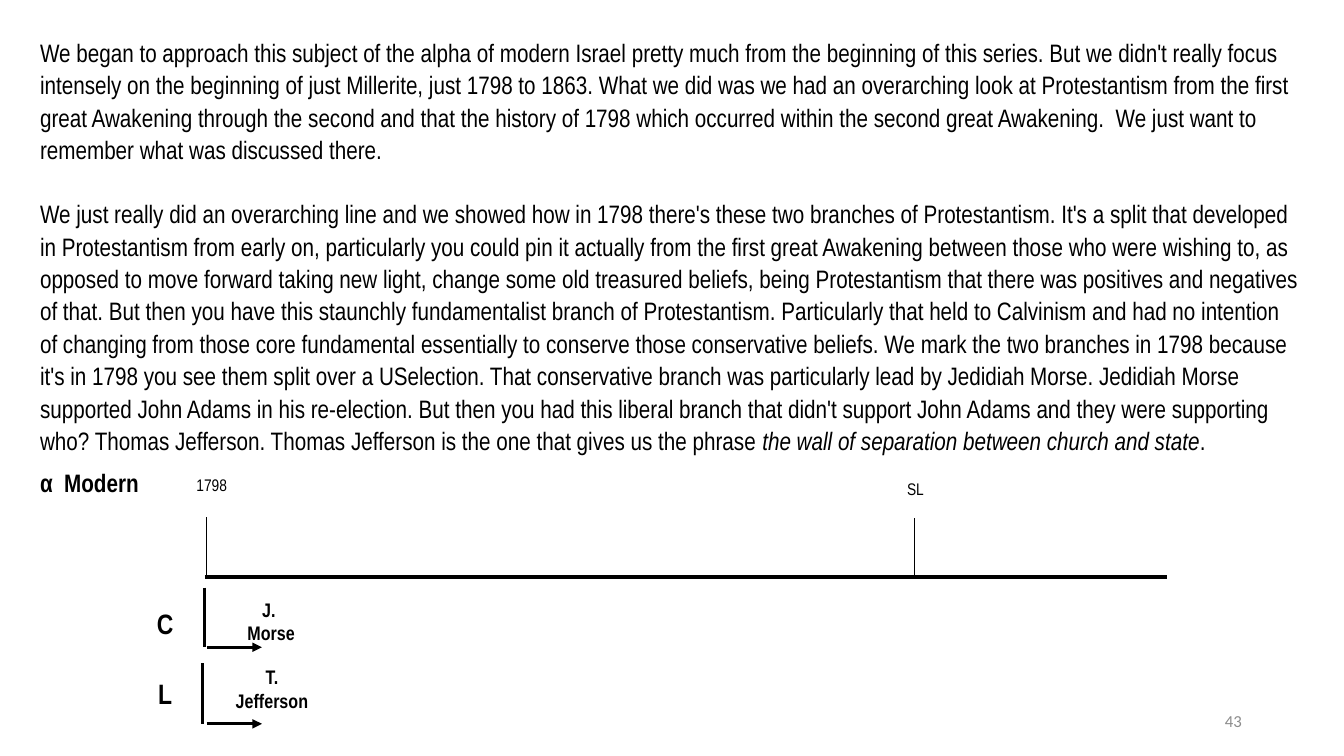
"""Build the slide on the two branches of Protestantism in 1798."""
from dataclasses import dataclass

from lxml.etree import SubElement
from pptx import Presentation
from pptx.dml.color import RGBColor
from pptx.enum.shapes import MSO_CONNECTOR
from pptx.enum.text import MSO_ANCHOR, MSO_AUTO_SIZE, PP_ALIGN
from pptx.oxml.ns import qn
from pptx.slide import Slide
from pptx.text.text import TextFrame
from pptx.util import Cm, Pt

BLACK = "000000"
GREY = "8C8C8C"
TIMELINE_Y = 14.53
ARROW_START, ARROW_END = 5.21, 6.6

OPENING = (
    "We began to approach this subject of the alpha of modern Israel pretty much from the beginning of "
    "this series. But we didn't really focus intensely on the beginning of just Millerite, just 1798 to "
    "1863. What we did was we had an overarching look at Protestantism from the first great Awakening "
    "through the second and that the history of 1798 which occurred within the second great Awakening.  "
    "We just want to remember what was discussed there."
)
SPLIT = (
    "We just really did an overarching line and we showed how in 1798 there's these two branches of "
    "Protestantism. It's a split that developed in Protestantism from early on, particularly you could "
    "pin it actually from the first great Awakening between those who were wishing to, as opposed to move "
    "forward taking new light, change some old treasured beliefs, being Protestantism that there was "
    "positives and negatives of that."
)
CONSERVATIVES = (
    "But then you have this staunchly fundamentalist branch of Protestantism. Particularly that held to "
    "Calvinism and had no intention of changing from those core fundamental essentially to conserve those "
    "conservative beliefs. We mark the two branches in 1798 because it's in 1798 you see them split over "
    "a USelection. That conservative branch was particularly lead by Jedidiah Morse. Jedidiah Morse "
    "supported John Adams in his re-election."
)
LIBERALS = (
    "But then you had this liberal branch that didn't support John Adams and they were supporting who? "
    "Thomas Jefferson. Thomas Jefferson is the one that gives us the phrase "
)
QUOTE = "the wall of separation between church and state"


@dataclass
class Label:
    """A text box with one format, placed in centimetres."""
    text: str
    left: float
    top: float
    width: float
    height: float
    size: float
    bold: bool = False
    align: PP_ALIGN = PP_ALIGN.LEFT
    font: str = "Arial Narrow"
    color: str = BLACK


@dataclass
class Stroke:
    """A straight line in centimetres, with its weight in points."""
    x1: float
    y1: float
    x2: float
    y2: float
    weight: float
    arrow: bool = False


@dataclass
class Branch:
    """A branch of Protestantism with its letter, leader and bracket."""
    letter: str
    leader: str
    letter_top: float
    leader_left: float
    leader_top: float
    bar_x: float
    bar_top: float
    arrow_y: float


LABELS = [
    Label("43", 23.93, 17.65, 7.62, 1.02, 12, align=PP_ALIGN.RIGHT, font="Calibri", color=GREY),
    Label("1798", 4.7, 11.84, 1.91, 0.76, 12),
    Label("SL", 22.61, 11.94, 1.42, 0.76, 12),
    Label("α  Modern", 0.76, 11.66, 3.63, 1.02, 18, bold=True),
]
STROKES = [
    Stroke(5.16, TIMELINE_Y, 29.41, TIMELINE_Y, 3),
    Stroke(5.21, 13.03, 5.21, TIMELINE_Y, 0.75),
    Stroke(23.04, 13.06, 23.04, TIMELINE_Y, 0.75),
]
BRANCHES = [
    Branch("C", "J. \nMorse", 15.16, 5.64, 14.94, 5.16, 14.81, 16.31),
    Branch("L", "T.\nJefferson", 16.92, 5.66, 16.64, 5.11, 16.71, 18.24),
]


def rgb(value: str) -> RGBColor:
    """Turn a hex string into a colour."""
    return RGBColor.from_string(value)


def add_label(page: Slide, label: Label) -> TextFrame:
    """Add a formatted text box and return its text frame."""
    box = page.shapes.add_textbox(Cm(label.left), Cm(label.top), Cm(label.width), Cm(label.height))
    frame = box.text_frame
    frame.word_wrap = True
    frame.auto_size = MSO_AUTO_SIZE.SHAPE_TO_FIT_TEXT
    frame.text = label.text
    for para in frame.paragraphs:
        para.alignment = label.align
        for span in para.runs:
            span.font.name = label.font
            span.font.size = Pt(label.size)
            span.font.bold = label.bold
            span.font.color.rgb = rgb(label.color)
    return frame


def add_body(page: Slide) -> None:
    """Add the two paragraphs of prose, with the quoted phrase in italics."""
    prose = f"{OPENING}\n{SPLIT} {CONSERVATIVES} {LIBERALS}"
    frame = add_label(page, Label(prose, 0.76, 0.76, 32.31, 10.9, 18))
    opening, branches = frame.paragraphs
    opening.space_after = Pt(23)
    for para in frame.paragraphs:
        para.line_spacing = 1.07
    for text, italic in ((QUOTE, True), (".", False)):
        span = branches.add_run()
        span.text = text
        span.font.name = "Arial Narrow"
        span.font.size = Pt(18)
        span.font.italic = italic
        span.font.color.rgb = rgb(BLACK)


def add_stroke(page: Slide, stroke: Stroke) -> None:
    """Add a black line, with an arrowhead at its end if asked."""
    line = page.shapes.add_connector(
        MSO_CONNECTOR.STRAIGHT, Cm(stroke.x1), Cm(stroke.y1), Cm(stroke.x2), Cm(stroke.y2)
    )
    line.line.color.rgb = rgb(BLACK)
    line.line.width = Pt(stroke.weight)
    properties = line._element.spPr
    if stroke.arrow:
        SubElement(properties.find(qn("a:ln")), qn("a:tailEnd"), type="triangle")
    SubElement(properties, qn("a:effectLst"))


def add_branch(page: Slide, branch: Branch) -> None:
    """Add a branch's bar and arrow with its letter and leader."""
    add_stroke(page, Stroke(branch.bar_x, branch.bar_top, branch.bar_x, branch.arrow_y, 2.25))
    add_stroke(page, Stroke(ARROW_START, branch.arrow_y, ARROW_END, branch.arrow_y, 2.25, arrow=True))
    add_label(page, Label(branch.letter, 3.25, branch.letter_top, 1.83, 1.12, 20, True, PP_ALIGN.CENTER))
    add_label(
        page,
        Label(branch.leader, branch.leader_left, branch.leader_top, 2.39, 1.45, 14, True, PP_ALIGN.CENTER),
    )


def main() -> None:
    """Build and save the deck."""
    deck = Presentation()
    deck.slide_width, deck.slide_height = Cm(33.87), Cm(19.05)
    page = deck.slides.add_slide(deck.slide_layouts.get_by_name("Blank"))
    add_body(page)
    for stroke in STROKES:
        add_stroke(page, stroke)
    for label in LABELS:
        frame = add_label(page, label)
        if label.color == GREY:
            frame.auto_size = MSO_AUTO_SIZE.NONE
            frame.vertical_anchor = MSO_ANCHOR.MIDDLE
    for branch in BRANCHES:
        add_branch(page, branch)
    deck.save("out.pptx")


if __name__ == "__main__":
    main()
